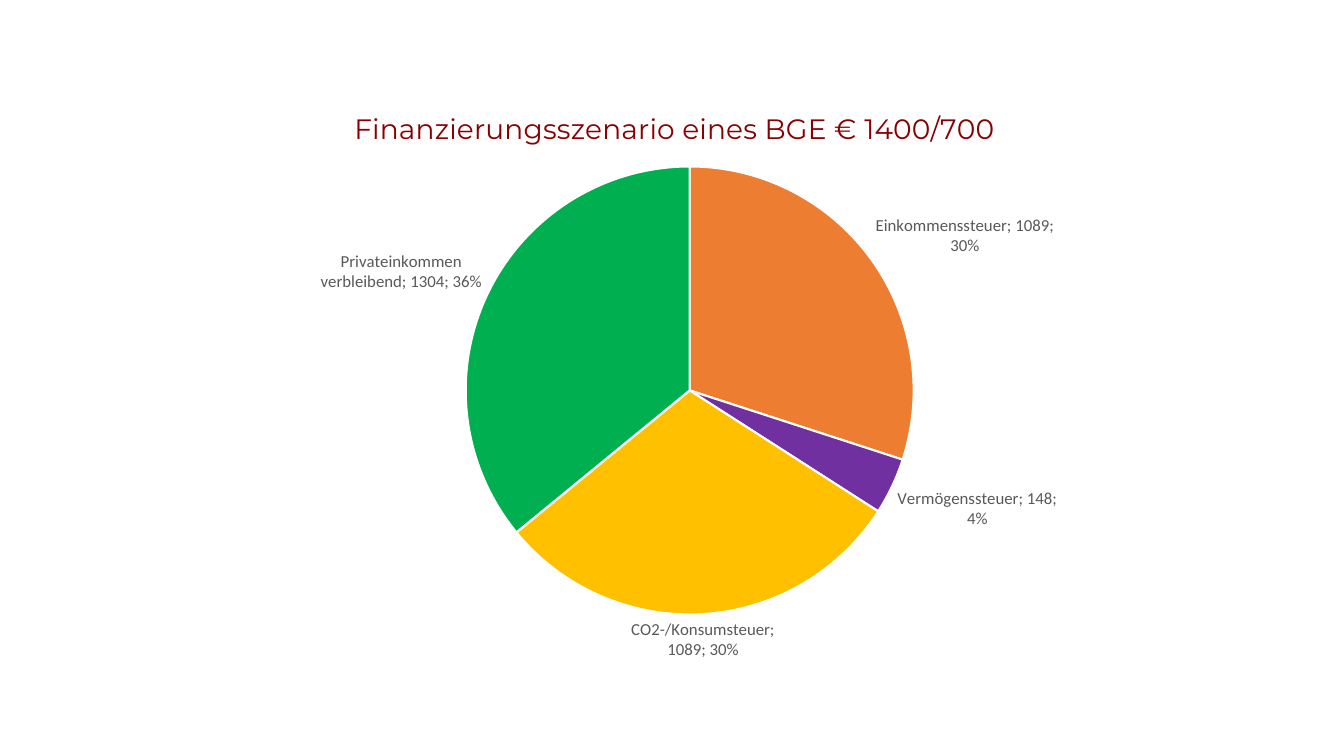
from lxml import etree
from pptx import Presentation
from pptx.chart.data import CategoryChartData
from pptx.dml.color import RGBColor
from pptx.enum.chart import XL_CHART_TYPE, XL_LABEL_POSITION
from pptx.oxml import parse_xml
from pptx.oxml.ns import nsdecls, qn
from pptx.util import Cm, Pt

COLORS = {
    "title": "880000",
    "label": "595959",
    "border": "FFFFFF",
    "income": "ED7D31",
    "wealth": "7030A0",
    "consumption": "FFC000",
    "private": "00B050",
}

FINANCING = [
    ("Einkommenssteuer", 1089, "income"),
    ("Vermögenssteuer", 148, "wealth"),
    ("CO2-/Konsumsteuer", 1089, "consumption"),
    ("Privateinkommen verbleibend", 1304, "private"),
]


def manual_layout(target="", **fractions):
    """Return a c:layout element placed in fractions of the chart area."""
    layout = parse_xml(f"<c:layout {nsdecls('c')}><c:manualLayout/></c:layout>")
    values = {"layoutTarget": target} if target else {}
    values |= {"xMode": "edge", "yMode": "edge", **fractions}
    for tag, value in values.items():
        etree.SubElement(layout[0], qn(f"c:{tag}")).set("val", str(value))
    return layout


class SlideBuilder:
    """Holds the fonts, the colours and the current slide."""

    title_font = "Montserrat"
    body_font = "Calibri"

    def __init__(self, prs):
        self.slide = prs.slides.add_slide(prs.slide_layouts[6])

    def style_font(self, font, name, size, color):
        font.name, font.size, font.bold = name, Pt(size), False
        font.color.rgb = RGBColor.from_string(COLORS[color])

    def pie(self, left, top, width, height, rows):
        data = CategoryChartData()
        data.categories = [name for name, _, _ in rows]
        data.add_series("Series 1", [value for _, value, _ in rows])
        chart = self.slide.shapes.add_chart(
            XL_CHART_TYPE.PIE, Cm(left), Cm(top), Cm(width), Cm(height), data
        ).chart
        chart.has_legend = False
        chart.font.name, chart.font.size = self.body_font, Pt(10)

        plot = chart.plots[0]
        plot.vary_by_categories = True
        for i, (_, _, color) in enumerate(rows):
            fmt = plot.series[0].points[i].format
            fmt.fill.solid()
            fmt.fill.fore_color.rgb = RGBColor.from_string(COLORS[color])
            fmt.line.color.rgb = RGBColor.from_string(COLORS["border"])
            fmt.line.width = Pt(1.5)
        self.pie_labels(plot.series[0].data_labels)
        return chart

    def pie_labels(self, labels):
        labels.show_category_name = True
        labels.show_value = True
        labels.show_percentage = True
        labels.position = XL_LABEL_POSITION.OUTSIDE_END
        self.style_font(labels.font, self.body_font, 12, "label")
        separator = parse_xml(f"<c:separator {nsdecls('c')}>; </c:separator>")
        labels._element.find(qn("c:showBubbleSize")).addnext(separator)

    def chart_title(self, chart, text, x, y):
        tf = chart.chart_title.text_frame
        tf.text = text
        self.style_font(tf.paragraphs[0].runs[0].font, self.title_font, 20, "title")
        title = chart.chart_title._element
        for old in title.findall(qn("c:layout")):
            title.remove(old)
        title.find(qn("c:tx")).addnext(manual_layout(x=x, y=y))

    def plot_area(self, chart, **fractions):
        area = chart._chartSpace.chart.plotArea
        for old in area.findall(qn("c:layout")):
            area.remove(old)
        area.insert(0, manual_layout("inner", **fractions))


def main():
    prs = Presentation()
    prs.slide_width, prs.slide_height = Cm(33.87), Cm(19.05)
    builder = SlideBuilder(prs)
    chart = builder.pie(5.64, 2.01, 22.58, 15.06, FINANCING)
    builder.chart_title(chart, "Finanzierungsszenario eines BGE € 1400/700", 0.14, 0.04)
    builder.plot_area(chart, x=0.27, y=0.14, w=0.5, h=0.76)
    prs.save("out.pptx")


if __name__ == "__main__":
    main()
